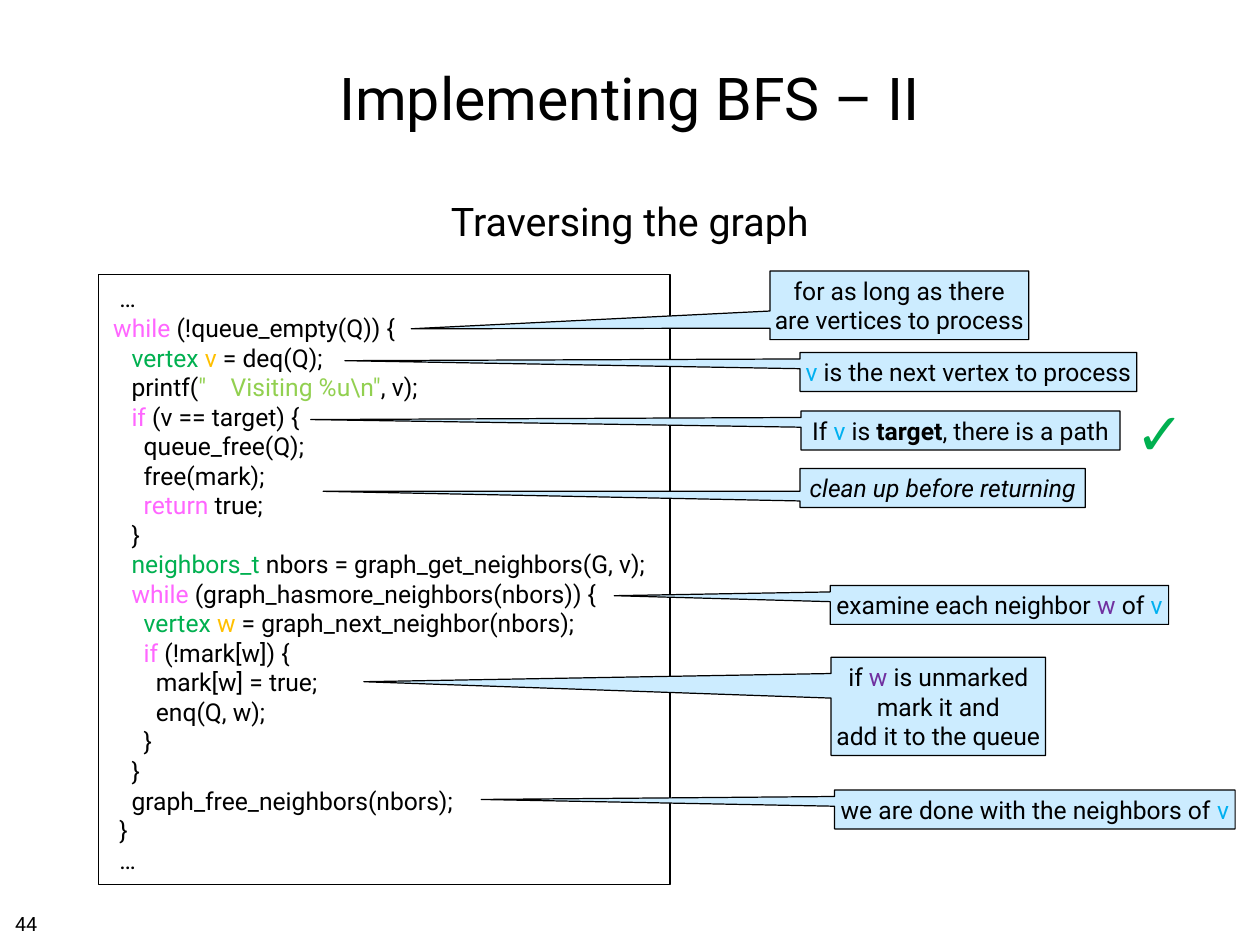
import pptx
import pptx.util
import pptx.dml.color
import pptx.enum.shapes
import pptx.enum.text

theme = {
    "font": "Roboto", "title": 48, "head": 32, "code": 20, "page": 16,
    "ink": "000000", "note": "CCECFF", "key": "FF66FF", "type": "00B050",
    "name": "FFC000", "quote": "92D050", "vert": "00B0F0", "next": "7030A0",
}
Align = pptx.enum.text.PP_ALIGN
Anchor = pptx.enum.text.MSO_ANCHOR
Kind = pptx.enum.shapes.MSO_SHAPE

deck = pptx.Presentation()
deck.slide_width = pptx.util.Inches(14.22)
deck.slide_height = pptx.util.Inches(10.67)
col, row = deck.slide_width / 100, deck.slide_height / 100
slide = deck.slides.add_slide(deck.slide_layouts[6])


def span(x, y, w, h):
    return [round(n) for n in (x * col, y * row, w * col, h * row)]


def write(frame, lines, size, align, pads, wrap=True, anchor=Anchor.TOP):
    frame.word_wrap = wrap
    frame.vertical_anchor = anchor
    frame.margin_left, frame.margin_top, frame.margin_right, frame.margin_bottom = [
        pptx.util.Inches(pad) for pad in pads]
    for i, (depth, line) in enumerate(lines):
        para = frame.add_paragraph() if i else frame.paragraphs[0]
        para.alignment = align
        if depth:
            para._p.get_or_add_pPr().set("marL", str(round(depth * space)))
        for j, part in enumerate(line.split("\n")):
            if j:
                para.add_line_break()
            for piece in part.split("|"):
                style, mark, text = piece.rpartition("^")
                run = para.add_run()
                run.text = text
                run.font.name = theme["font"]
                run.font.size = pptx.util.Pt(size)
                run.font.bold = style.startswith("bold")
                run.font.italic = style == "ital"
                tint = theme.get(style.removeprefix("bold "), theme["ink"])
                run.font.color.rgb = pptx.dml.color.RGBColor.from_string(tint)


space = pptx.util.Pt(4.95)
even = [0.06] * 4

labels = [
    ((7.31, 2.62, 85.37, 15.37), "Implementing BFS – II", "title", Align.CENTER, True, Anchor.MIDDLE),
    ((7.31, 20.34, 85.37, 7.5), "Traversing the graph", "head", Align.CENTER, True, Anchor.TOP),
    ((89.59, 41.42, 5.06, 8.53), "bold type^✓", "title", Align.CENTER, False, Anchor.TOP),
    ((0.77, 95.88, 2.6, 3.28), "44", "page", Align.LEFT, False, Anchor.TOP),
]
for place, text, size, align, wrap, anchor in labels:
    box = slide.shapes.add_textbox(*span(*place))
    write(box.text_frame, [(0, text)], theme[size], align, even, wrap, anchor)

code = [
    (2, "…"),
    (1, "key^while| (!queue_empty(Q)) {"),
    (4, "type^vertex |name^v| = deq(Q);"),
    (4, "printf(|quote^\"    Visiting %u\\n\"|, v);"),
    (4, "key^if| (v == target) {"),
    (6, "queue_free(Q);"),
    (6, "free(mark);"),
    (6, "key^return| true;"),
    (4, "}"),
    (4, "type^neighbors_t |nbors = graph_get_neighbors(G, v);"),
    (4, "key^while| (graph_hasmore_neighbors(nbors)) {"),
    (6, "type^vertex |name^w| = graph_next_neighbor(nbors);"),
    (6, "key^if| (!mark[w]) {"),
    (8, "mark[w] = true;"),
    (8, "enq(Q, w);"),
    (6, "}"),
    (4, "}"),
    (4, "graph_free_neighbors(nbors);"),
    (2, "}"),
    (2, "…"),
]
panel = slide.shapes.add_shape(Kind.RECTANGLE, *span(7.81, 29.05, 45.36, 64.57))
panel.fill.background()
write(panel.text_frame, code, theme["code"], Align.LEFT, (0.1, 0.1, 0.06, 0.06))
framed = [panel]

notes = [
    (61.11, 28.68, 20.53, -1.887, 0.342, "for as long as there\nare vertices to process"),
    (63.5, 37.3, 26.72, -1.852, -0.289, "vert^v| is the next vertex to process"),
    (63.57, 43.49, 25.32, -2.037, -0.279, "If |vert^v| is |bold^target|, there is a path"),
    (63.5, 49.58, 22.64, -2.172, 0.086, "ital^clean up before returning"),
    (65.89, 61.95, 26.86, -1.138, -0.236, "examine each neighbor |next^w| of |vert^v"),
    (65.96, 69.54, 17.02, -2.679, -0.25, "if |next^w| is unmarked\nmark it and\nadd it to the queue"),
    (66.24, 83.6, 31.79, -1.382, -0.257, "we are done with the neighbors of |vert^v"),
]
for x, y, w, tip_x, tip_y, text in notes:
    h = 0.98 + 3.14 * (text.count("\n") + 1)
    note = slide.shapes.add_shape(Kind.RECTANGULAR_CALLOUT, *span(x, y, w, h))
    note.adjustments[0], note.adjustments[1] = tip_x, tip_y
    note.fill.solid()
    note.fill.fore_color.rgb = pptx.dml.color.RGBColor.from_string(theme["note"])
    write(note.text_frame, [(0, text)], theme["code"], Align.CENTER, [0.05] * 4, False, Anchor.MIDDLE)
    note.text_frame.auto_size = pptx.enum.text.MSO_AUTO_SIZE.SHAPE_TO_FIT_TEXT
    framed.append(note)

for shape in framed:
    shape.shadow.inherit = False
    shape.line.color.rgb = pptx.dml.color.RGBColor.from_string(theme["ink"])
    shape.line.width = pptx.util.Pt(1)

deck.save("out.pptx")
